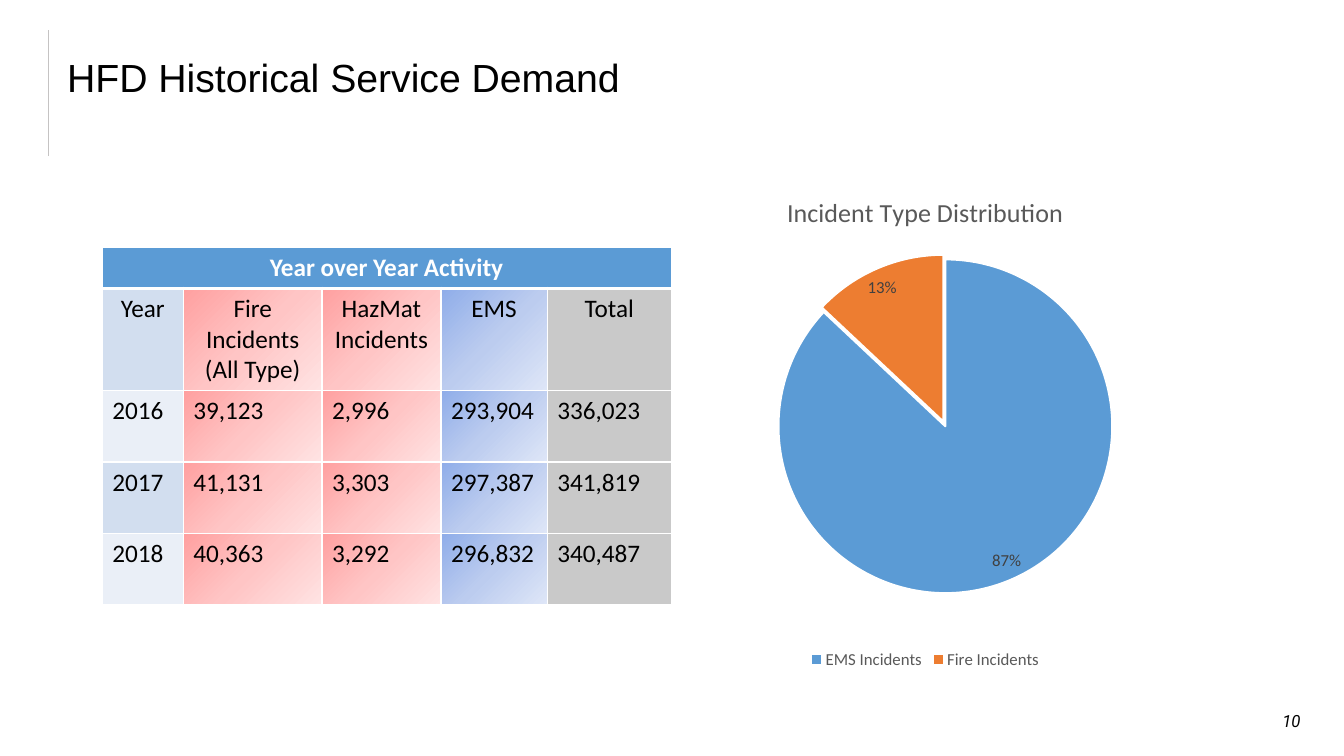
from dataclasses import dataclass

from pptx import Presentation
from pptx.chart.data import CategoryChartData
from pptx.dml.color import RGBColor
from pptx.enum.chart import XL_CHART_TYPE as CT, XL_LABEL_POSITION as LP, XL_LEGEND_POSITION as LG
from pptx.enum.shapes import MSO_CONNECTOR as CONN
from pptx.enum.text import MSO_ANCHOR as ANC, PP_ALIGN as AL
from pptx.oxml import parse_xml
from pptx.oxml.ns import nsdecls, qn
from pptx.util import Pt


@dataclass(frozen=True)
class Theme:
    black: str = "000000"
    white: str = "FFFFFF"
    rule: str = "C5C3C3"
    blue: str = "5B9BD5"
    orange: str = "ED7D31"
    chart_text: str = "595959"
    label_text: str = "404040"
    bands: tuple = ("D2DEEF", "EAEFF7")
    total: str = "C9C9C9"
    red_grad: tuple = ("FFA0A0", "FFC5C5", "FFE3E3")
    blue_grad: tuple = ("8FADE9", "BCCCEF", "DEE6F7")
    title_font: str = "Arial"
    body_font: str = "Calibri"
    number_font: str = "Roboto"
    title_size: float = 28
    chart_title_size: float = 18.6
    table_size: float = 18
    small_size: float = 12


T = Theme()

COL_WIDTHS = (58, 99, 85, 76, 88.5)
ROW_HEIGHTS = (29, 73, 51, 51, 51)
HEADERS = ("Year", "Fire Incidents\n(All Type)", "HazMat Incidents", "EMS", "Total")
ACTIVITY = (
    ("2016", "39,123", "2,996", "293,904", "336,023"),
    ("2017", "41,131", "3,303", "297,387", "341,819"),
    ("2018", "40,363", "3,292", "296,832", "340,487"),
)


def style_font(font, name, size, color, bold=False, italic=False):
    font.name, font.size = name, Pt(size)
    font.bold, font.italic = bold, italic
    font.color.rgb = RGBColor.from_string(color)


def add_run(p, text, *style, **flags):
    r = p.add_run()
    r.text = text
    style_font(r.font, *style, **flags)


def add_text(s, text, box, *style, align=AL.LEFT, spacing=1.0, **flags):
    tf = s.shapes.add_textbox(*map(Pt, box)).text_frame
    tf.word_wrap = True
    tf.vertical_anchor = ANC.MIDDLE
    tf.margin_left = tf.margin_right = tf.margin_top = tf.margin_bottom = 0
    p = tf.paragraphs[0]
    p.alignment, p.line_spacing = align, spacing
    add_run(p, text, *style, **flags)


def add_rule(s, x, top, bottom):
    line = s.shapes.add_connector(CONN.STRAIGHT, Pt(x), Pt(bottom), Pt(x), Pt(top))
    line.line.color.rgb = RGBColor.from_string(T.rule)
    line.line.width = Pt(1)
    line._element.spPr.append(parse_xml(f"<a:effectLst {nsdecls('a')}/>"))


# Table cells
def solid_xml(color):
    return f'<a:solidFill {nsdecls("a")}><a:srgbClr val="{color}"/></a:solidFill>'


def fill_xml(fill):
    if isinstance(fill, str):
        return solid_xml(fill)
    stops = "".join(f'<a:gs pos="{i * 50000}"><a:srgbClr val="{c}"/></a:gs>'
                    for i, c in enumerate(fill))
    return (f'<a:gradFill {nsdecls("a")} rotWithShape="1"><a:gsLst>{stops}</a:gsLst>'
            f'<a:lin ang="{45 * 60000}" scaled="0"/></a:gradFill>')


def paint_cell(cell, fill, top=1, bottom=1):
    tcPr = cell._tc.get_or_add_tcPr()
    for side, width in (("L", 1), ("R", 1), ("T", top), ("B", bottom)):
        tcPr.append(parse_xml(f'<a:ln{side} {nsdecls("a")} w="{Pt(width)}">'
                              f'{solid_xml(T.white)}</a:ln{side}>'))
    tcPr.append(parse_xml(fill_xml(fill)))


def write_cell(cell, text, align, color=T.black, bold=False):
    tf = cell.text_frame
    for i, line in enumerate(text.split("\n")):
        p = tf.add_paragraph() if i else tf.paragraphs[0]
        p.alignment = align
        add_run(p, line, T.body_font, T.table_size, color, bold=bold)


def add_activity_table(s):
    n_rows, n_cols = len(ROW_HEIGHTS), len(COL_WIDTHS)
    table = s.shapes.add_table(n_rows, n_cols, Pt(73), Pt(177), Pt(sum(COL_WIDTHS)),
                               Pt(sum(ROW_HEIGHTS))).table
    table.first_row = table.horz_banding = False
    for col, width in zip(table.columns, COL_WIDTHS):
        col.width = Pt(width)
    for row, height in zip(table.rows, ROW_HEIGHTS):
        row.height = Pt(height)

    # Banner across all columns
    banner = table.cell(0, 0)
    banner.merge(table.cell(0, n_cols - 1))
    for c in range(n_cols):
        paint_cell(table.cell(0, c), T.blue, bottom=3)
    write_cell(banner, "Year over Year Activity", AL.CENTER, T.white, bold=True)

    # Headings and yearly counts
    for r, values in enumerate((HEADERS, *ACTIVITY)):
        fills = (T.bands[r % 2], T.red_grad, T.red_grad, T.blue_grad, T.total)
        for c, (text, fill) in enumerate(zip(values, fills)):
            cell = table.cell(r + 1, c)
            paint_cell(cell, fill, top=1 if r else 3)
            write_cell(cell, text, AL.LEFT if r else AL.CENTER)


# Pie chart
def place_plot(chart, x, y, w, h):
    area = chart._chartSpace.chart.plotArea
    for old in area.findall(qn("c:layout")):
        area.remove(old)
    sizes = "".join(f'<c:{k} val="{v}"/>' for k, v in zip("xywh", (x, y, w, h)))
    area.insert(0, parse_xml(
        f'<c:layout {nsdecls("c")}><c:manualLayout><c:layoutTarget val="inner"/>'
        f'<c:xMode val="edge"/><c:yMode val="edge"/>{sizes}</c:manualLayout></c:layout>'))


def explode_point(point, percent):
    fmt = point.format._element.find(qn("c:spPr"))
    fmt.addprevious(parse_xml(f'<c:explosion {nsdecls("c")} val="{percent}"/>'))


def add_incident_pie(s):
    data = CategoryChartData(number_format="0%")
    data.categories = ("EMS Incidents", "Fire Incidents")
    data.add_series("Incident Type Distribution", (0.87, 0.13))
    chart = s.shapes.add_chart(CT.PIE, Pt(502), Pt(124.5), Pt(318), Pt(356.5), data).chart
    style_font(chart.font, T.body_font, T.small_size, T.chart_text)
    chart.has_title = True
    add_run(chart.chart_title.text_frame.paragraphs[0], "Incident Type Distribution",
            T.body_font, T.chart_title_size, T.chart_text)
    chart.has_legend = True
    chart.legend.position = LG.BOTTOM
    chart.legend.include_in_layout = False
    style_font(chart.legend.font, T.body_font, T.small_size, T.chart_text)

    plot = chart.plots[0]
    plot.vary_by_categories = True
    series = plot.series[0]
    for i, color in enumerate((T.blue, T.orange)):
        fmt = series.points[i].format
        fmt.fill.solid()
        fmt.fill.fore_color.rgb = RGBColor.from_string(color)
        fmt.line.color.rgb = RGBColor.from_string(T.white)
        fmt.line.width = Pt(1.5)
    fire = series._element.findall(qn("c:dPt"))[1]
    fire.find(qn("c:spPr")).addprevious(parse_xml(f'<c:explosion {nsdecls("c")} val="3"/>'))

    labels = series.data_labels
    labels.show_value = True
    labels.show_percentage = False
    labels.number_format, labels.number_format_is_linked = "0%", False
    labels.position = LP.BEST_FIT
    style_font(labels.font, T.body_font, T.small_size, T.label_text)
    place_plot(chart, 0.17, 0.17, 0.75, 0.67)


def main():
    prs = Presentation()
    prs.slide_width, prs.slide_height = Pt(960), Pt(540)
    s = prs.slides.add_slide(prs.slide_layouts[6])

    # Heading
    add_rule(s, 34.5, 21.5, 111.5)
    add_text(s, "HFD Historical Service Demand", (48, 24, 706, 66),
             T.title_font, T.title_size, T.black, spacing=0.9)

    # Content
    add_activity_table(s)
    add_incident_pie(s)

    # Page number
    add_text(s, "10", (900.5, 500.5, 44, 29), T.number_font, T.small_size, T.black,
             align=AL.CENTER, italic=True)
    prs.save("out.pptx")


if __name__ == "__main__":
    main()
